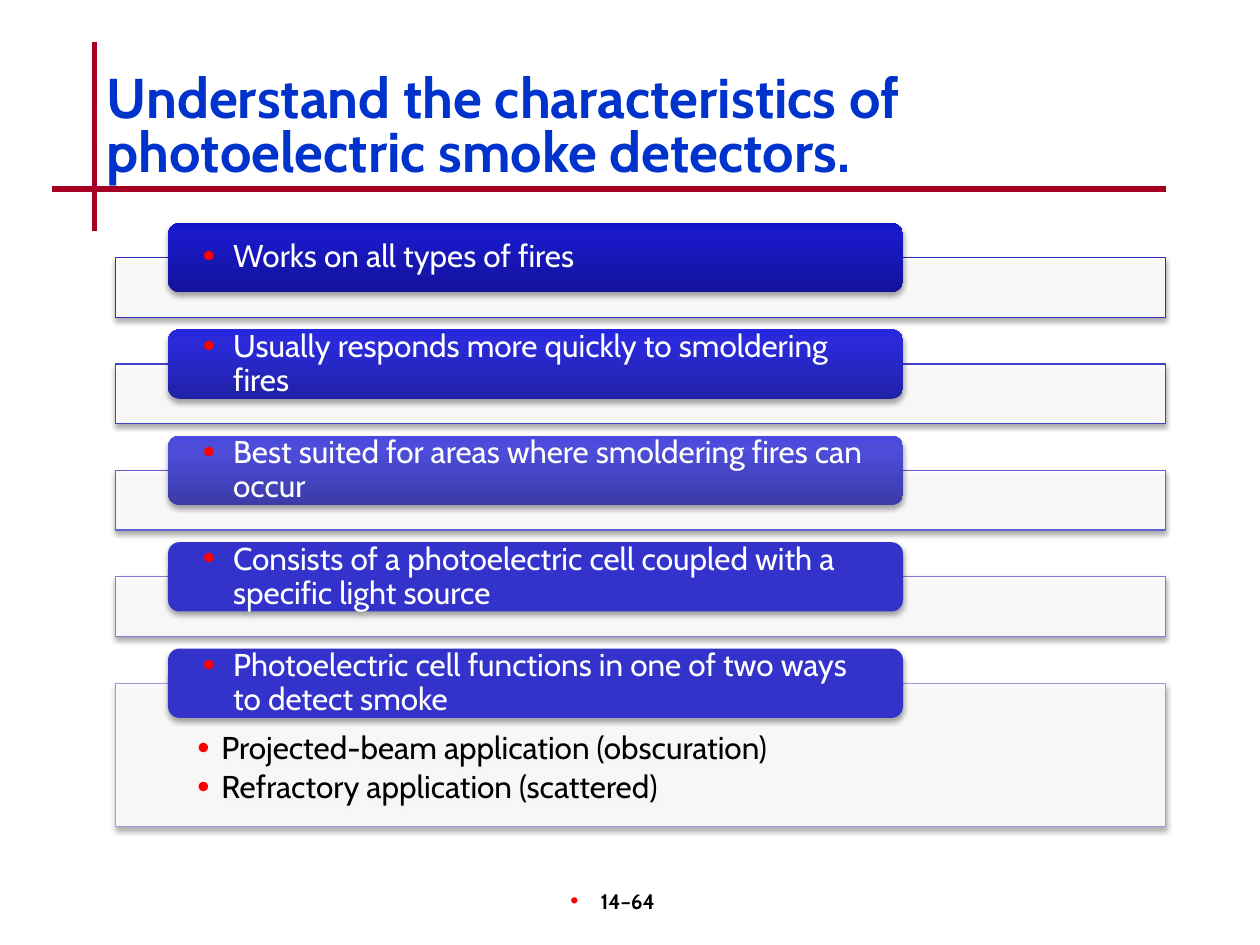
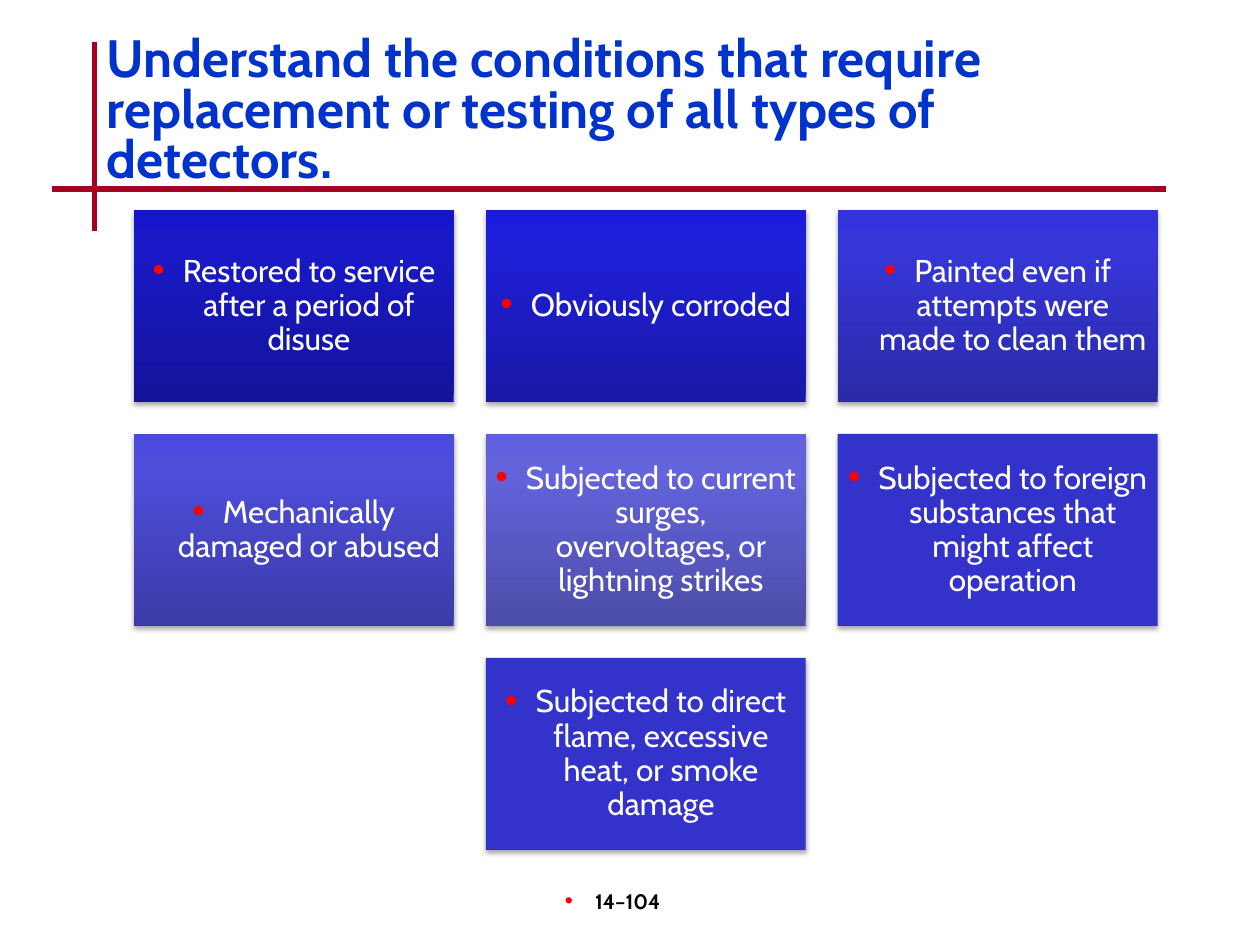
from copy import deepcopy
from lxml.etree import SubElement as Sub
from pptx import Presentation
from pptx.dml.color import RGBColor as Rgb
from pptx.enum.shapes import MSO_CONNECTOR as Link, MSO_SHAPE as Form
from pptx.enum.text import MSO_ANCHOR as Anchor, PP_ALIGN as Align
from pptx.oxml.ns import qn
from pptx.util import Inches, Pt

COLS, ROWS, CELL = 120, 90, Inches(1) / 12
FACE = "Cabin"
HUES = {"rule": "A50021", "title": "0033CC", "dot": "FF0000", "ink": "000000",
        "paper": "FFFFFF", "flat": "3333CC"}
FADES = {"navy": ("13139A", "1919C8", "1515CC"), "royal": ("1818A7", "1F1FD9", "1B1BDE"),
         "cobalt": ("2121A7", "2A2AD9", "2727DD"), "azure": ("2A2AA7", "3636D9", "3333DD"),
         "iris": ("3B3BA8", "4D4DDA", "4A4ADE"), "lilac": ("4C4CA9", "6363DB", "6161DF")}
HEAD = {"size": Pt(32), "bold": True}
FOOT = {"size": Pt(12), "bold": True}
BODY = {"size": Pt(18), "bold": False}

TRAITS = [
    ("Works on all types of fires", "navy", "2E2EB9"),
    ("Usually responds more quickly to smoldering fires", "cobalt", "4141CB"),
    ("Best suited for areas where smoldering fires can occur", "iris", "6060D0"),
    ("Consists of a photoelectric cell coupled with a specific light source", "flat", "7E7ED6"),
    ("Photoelectric cell functions in one of two ways to detect smoke", "flat", "9C9CDD")]
WAYS = ["Projected-beam application (obscuration)", "Refractory application (scattered)"]
CAUSES = [
    ("Restored to service after a period of disuse", "navy"),
    ("Obviously corroded", "royal"),
    ("Painted even if attempts were made to clean them", "azure"),
    ("Mechanically damaged or abused", "iris"),
    ("Subjected to current surges, overvoltages, or lightning strikes", "lilac"),
    ("Subjected to foreign substances that might affect operation", "flat"),
    ("Subjected to direct flame, excessive heat, or smoke damage", "flat")]


def emu(*cells):
    """Turn grid cells into lengths."""
    return [round(c * CELL) for c in cells]


def style(item, **form):
    """Set each named attribute on the item."""
    for name, value in form.items():
        setattr(item, name, value)


def bullet(para, indent):
    """Give the paragraph a red hanging bullet."""
    props = para._p.get_or_add_pPr()
    props.set("marL", str(Inches(indent)))
    props.set("indent", str(-Inches(indent)))
    Sub(Sub(props, qn("a:buClr")), qn("a:srgbClr"), val=HUES["dot"])
    Sub(props, qn("a:buSzPct"), val="110000")
    Sub(props, qn("a:buFont"), typeface="Arial")
    Sub(props, qn("a:buChar"), char="•")


def write(shape, lines, font, hue, pads=(0.1, 0.05, 0.1, 0.05), anchor=Anchor.TOP,
          indent=0, **form):
    """Fill the shape with styled paragraphs."""
    frame = shape.text_frame
    sides = ("margin_left", "margin_top", "margin_right", "margin_bottom")
    style(frame, word_wrap=True, vertical_anchor=anchor,
          **{side: Inches(pad) for side, pad in zip(sides, pads)})
    for i, line in enumerate(lines):
        para = frame.add_paragraph() if i else frame.paragraphs[0]
        if indent:
            bullet(para, indent)
        style(para, **{"alignment": Align.LEFT, **form})
        run = para.add_run()
        run.text = line
        style(run.font, name=FACE, **font)
        run.font.color.rgb = Rgb.from_string(HUES[hue])


def shade(shape):
    """Cast a soft shadow straight down."""
    cast = Sub(Sub(shape._element.spPr, qn("a:effectLst")), qn("a:outerShdw"),
               blurRad=str(Pt(3.1)), dist=str(Pt(1.8)), dir="5400000", rotWithShape="0")
    tone = Sub(cast, qn("a:srgbClr"), val=HUES["ink"])
    Sub(tone, qn("a:alpha"), val="35000")


def block(slide, form, box, tint):
    """Draw a borderless shadowed shape, flat or faded."""
    shape = slide.shapes.add_shape(form, *emu(*box))
    fill = shape.fill
    if tint in FADES:
        fill.gradient()
        fill.gradient_angle = 90
        last = shape._element.spPr.findall(".//" + qn("a:gs"))[-1]
        last.addnext(deepcopy(last))
        for stop, hue, spot in zip(fill.gradient_stops, FADES[tint], (0, 0.8, 1)):
            stop.color.rgb = Rgb.from_string(hue)
            stop.position = spot
    else:
        fill.solid()
        fill.fore_color.rgb = Rgb.from_string(HUES[tint])
    shape.line.fill.background()
    shade(shape)
    return shape


def panel(slide, box, edge):
    """Draw a pale outlined panel."""
    shape = block(slide, Form.RECTANGLE, box, "paper")
    tone = shape._element.spPr.find(qn("a:solidFill")).find(qn("a:srgbClr"))
    Sub(tone, qn("a:alpha"), val="90000")
    shape.line.color.rgb = Rgb.from_string(edge)
    shape.line.width = Pt(0.75)
    return shape


def base(deck, title, page, top, size):
    """Start a slide with crossed rules, title and page number."""
    slide = deck.slides.add_slide(deck.slide_layouts[6])
    for ends in ((9, 4, 9, 22), (5, 18, 111, 18)):
        rule = slide.shapes.add_connector(Link.STRAIGHT, *emu(*ends))
        rule.line.color.rgb = Rgb.from_string(HUES["rule"])
        rule.line.width = Pt(3)
        Sub(rule._element.spPr, qn("a:effectLst"))
    foot = slide.shapes.add_textbox(*emu(47, 84, 25, 6))
    write(foot, [page], FOOT, "ink", (0.1, 0.05, 0.29, 0.05), indent=0.24,
          alignment=Align.CENTER)
    head = slide.shapes.add_textbox(*emu(9, top, 102, 12))
    write(head, [title], {**HEAD, "size": Pt(size)}, "title", line_spacing=0.8)
    return slide


def stack(slide, box):
    """Stack labelled panels down the box, the last holding details."""
    left, top, wide, high = box
    tab, thin = 6.6, 5.67
    step = (high - tab / 2 - 13.68) / (len(TRAITS) - 1)
    for i, (label, tint, edge) in enumerate(TRAITS):
        y = top + i * step
        last = i == len(TRAITS) - 1
        tray = panel(slide, (left, y + tab / 2, wide, 13.68 if last else thin), edge)
        if last:
            write(tray, WAYS, BODY, "ink", (0.65, 0.39, 0.65, 0.14), indent=0.19,
                  line_spacing=0.9, space_after=Pt(3))
        card = block(slide, Form.ROUNDED_RECTANGLE,
                     (left + wide * 0.05, y, wide * 0.7, tab), tint)
        write(card, [label], BODY, "paper", (0.25, 0, 0.25, 0), Anchor.MIDDLE, 0.24,
              line_spacing=0.9)


def tiles(slide, box, across=3):
    """Lay tiles in rows across the box, centring a short row."""
    left, top, wide = box
    side = wide / (across + (across - 1) * 0.1)
    tall, gap = side * 0.6, side * 0.1
    for i, (label, tint) in enumerate(CAUSES):
        row, col = divmod(i, across)
        short = across - min(across, len(CAUSES) - row * across)
        spot = (left + (col + short / 2) * (side + gap), top + row * (tall + gap))
        tile = block(slide, Form.RECTANGLE, (*spot, side, tall), tint)
        write(tile, [label], BODY, "paper", (0.07,) * 4, Anchor.MIDDLE, 0.24,
              alignment=Align.CENTER, line_spacing=0.9)


def main():
    """Build and save both slides."""
    deck = Presentation()
    deck.slide_width, deck.slide_height = emu(COLS, ROWS)
    stack(base(deck, "Understand the characteristics of photoelectric smoke detectors.",
               "14–64", 6.6, 32), (11, 21.25, 100, 57.5))
    tiles(base(deck, "Understand the conditions that require replacement or testing "
               "of all types of detectors.", "14–104", 3, 30), (12.75, 20, 97.5))
    deck.save("out.pptx")


if __name__ == "__main__":
    main()
